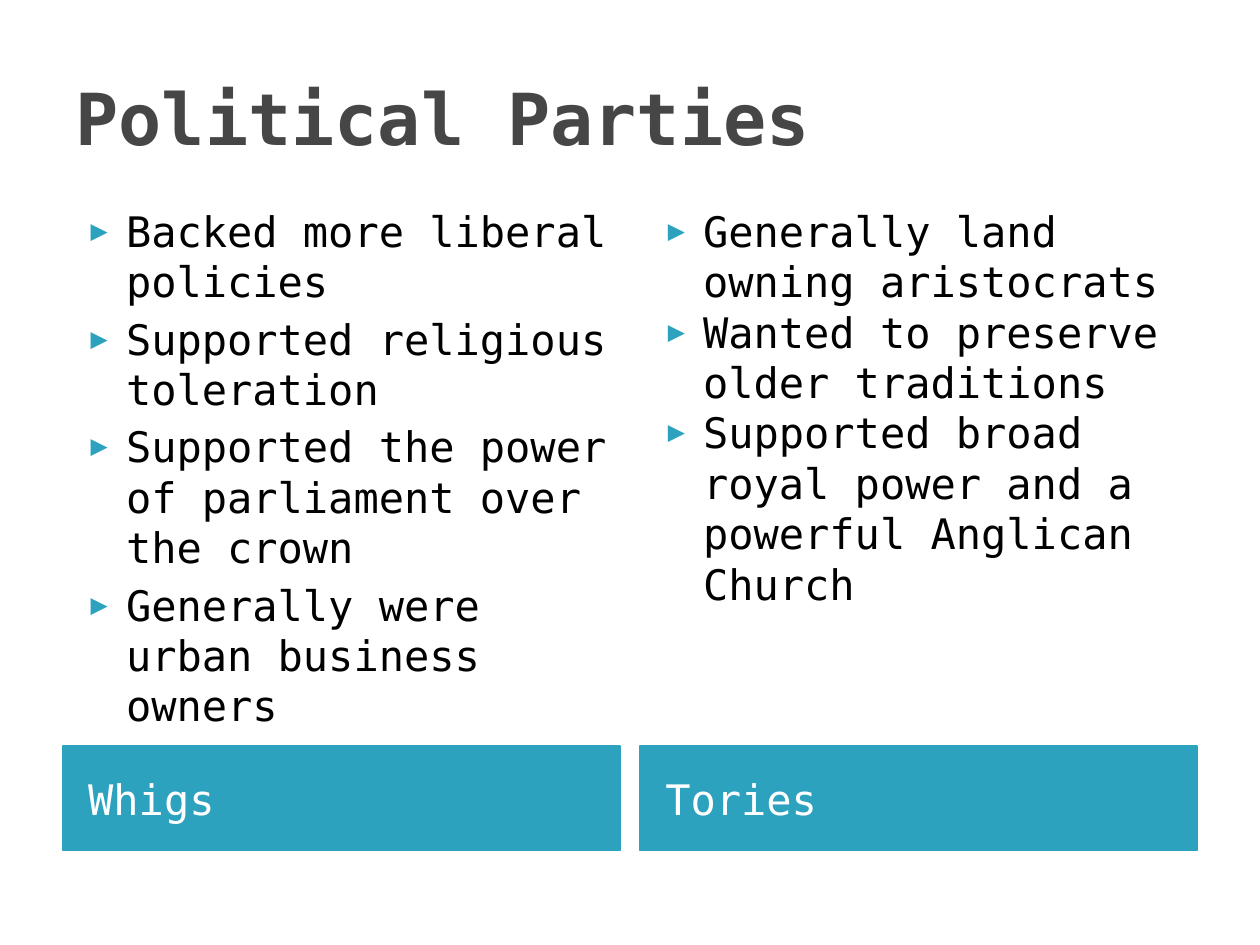
from lxml.etree import SubElement
from pptx import Presentation
from pptx.dml.color import RGBColor
from pptx.enum.text import MSO_ANCHOR, MSO_AUTO_SIZE, PP_ALIGN
from pptx.oxml.ns import qn
from pptx.util import Inches, Pt

TITLE = "Political Parties"
PARTIES = [
    {"name": "Whigs", "space": 4, "points": [
        "Backed more liberal policies",
        "Supported religious toleration",
        "Supported the power of parliament over the crown",
        "Generally were urban business owners",
    ]},
    {"name": "Tories", "space": 0, "points": [
        "Generally land owning aristocrats",
        "Wanted to preserve older traditions",
        "Supported broad royal power and a powerful Anglican Church",
    ]},
]
COLORS = {"title": "464646", "accent": "2DA2BF", "text": "000000", "label": "FFFFFF"}
FONT = "DejaVu Sans Mono"
COMPARISON_LAYOUT = 4
MARGIN, COLUMN_WIDTH, GAP = 0.5, 4.42, 0.16


def color(name):
    return RGBColor.from_string(COLORS[name])


def place(box, left, top, width, height, anchor):
    box.left, box.top = Inches(left), Inches(top)
    box.width, box.height = Inches(width), Inches(height)
    frame = box.text_frame
    frame.word_wrap = True
    frame.auto_size = MSO_AUTO_SIZE.NONE
    frame.vertical_anchor = anchor


def style(paragraph, size, color_name, bold=False):
    paragraph.alignment = PP_ALIGN.LEFT
    paragraph.space_before = Pt(0)
    font = paragraph.font
    font.name, font.size, font.bold = FONT, Pt(size), bold
    font.color.rgb = color(color_name)


def add_bullet(paragraph):
    properties = paragraph._p.get_or_add_pPr()
    properties.set("marL", str(Inches(0.4)))
    properties.set("indent", str(Inches(-0.28)))
    bullet_color = SubElement(properties, qn("a:buClr"))
    SubElement(bullet_color, qn("a:srgbClr"), val=COLORS["accent"])
    SubElement(properties, qn("a:buSzPct"), val="68000")
    SubElement(properties, qn("a:buFont"), typeface=FONT)
    SubElement(properties, qn("a:buChar"), char="▶")


def fill_label(box, name):
    box.fill.solid()
    box.fill.fore_color.rgb = color("accent")
    box.line.color.rgb = color("accent")
    box.line.width = Pt(0.75)
    box.text_frame.margin_left = Inches(0.2)
    box.text_frame.text = name
    style(box.text_frame.paragraphs[0], 24, "label")


def fill_points(box, points, space):
    frame = box.text_frame
    frame.text = "\n".join(points)
    for index, paragraph in enumerate(frame.paragraphs):
        add_bullet(paragraph)
        style(paragraph, 24, "text")
        if index:
            paragraph.space_before = Pt(space)


def main():
    deck = Presentation()
    deck.slide_width, deck.slide_height = Inches(10), Inches(7.5)
    page = deck.slides.add_slide(deck.slide_layouts[COMPARISON_LAYOUT])

    title = page.shapes.title
    place(title, MARGIN, 0.3, 9, 1.25, MSO_ANCHOR.MIDDLE)
    title.text_frame.text = TITLE
    style(title.text_frame.paragraphs[0], 41, "title", bold=True)

    for column, party in enumerate(PARTIES):
        left = MARGIN + column * (COLUMN_WIDTH + GAP)
        label = page.placeholders[1 + 2 * column]
        body = page.placeholders[2 + 2 * column]
        place(label, left, 5.92, COLUMN_WIDTH, 0.83, MSO_ANCHOR.MIDDLE)
        fill_label(label, party["name"])
        place(body, left, 1.58, COLUMN_WIDTH, 4.31, MSO_ANCHOR.TOP)
        fill_points(body, party["points"], party["space"])

    deck.save("out.pptx")


if __name__ == "__main__":
    main()
